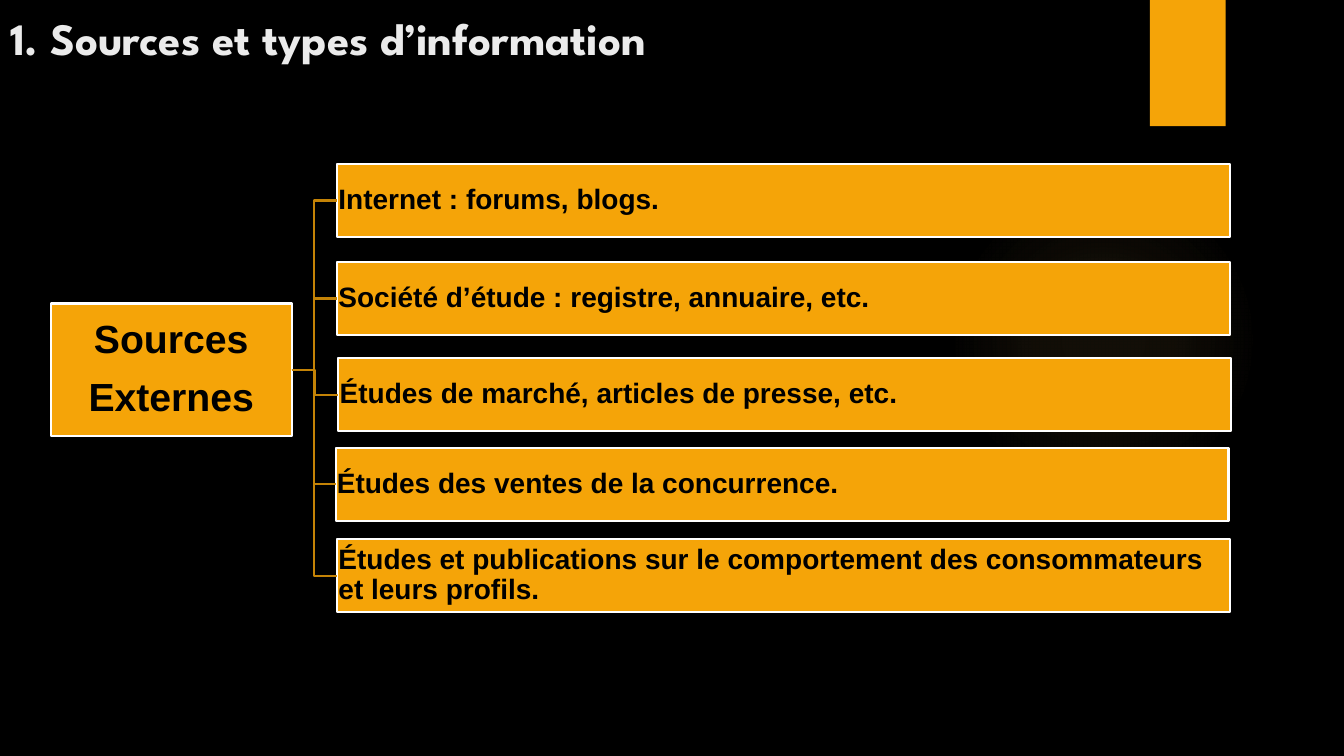
from lxml.etree import SubElement
from pptx import Presentation
from pptx.dml.color import RGBColor
from pptx.enum.shapes import MSO_CONNECTOR, MSO_SHAPE
from pptx.enum.text import MSO_ANCHOR, MSO_AUTO_SIZE, PP_ALIGN
from pptx.oxml import parse_xml
from pptx.oxml.ns import nsdecls, qn
from pptx.util import Cm, Pt

COLORS = {
    "background": "000000",
    "accent": "F5A408",
    "glow": "FAC96A",
    "title": "EBEBEB",
    "text": "000000",
    "border": "FFFFFF",
    "branch": "C48306",
}
RIGHT_SITE, LEFT_SITE = 3, 1
BAR_WIDTH, BAR_HEIGHT = 22.5, 1.85

# Left and top of each bar within the diagram, with its text
SOURCES = [
    (7.22, 0, "Internet : forums, blogs."),
    (7.22, 2.47, "Société d’étude : registre, annuaire, etc."),
    (7.25, 4.89, "Études de marché, articles de presse, etc."),
    (7.18, 7.15, "Études des ventes de la concurrence."),
    (7.22, 9.45, "Études et publications sur le comportement des "
                 "consommateurs et leurs profils."),
]


def color(name):
    return RGBColor.from_string(COLORS[name])


def format_paragraph(paragraph, font_name, size, color_name, alignment):
    paragraph.alignment = alignment
    for run in paragraph.runs:
        run.font.name = font_name
        run.font.size = Pt(size)
        run.font.bold = True
        run.font.color.rgb = color(color_name)


def add_filled_shape(slide, kind, left, top, width, height):
    shape = slide.shapes.add_shape(kind, Cm(left), Cm(top), Cm(width), Cm(height))
    shape.shadow.inherit = False
    shape.fill.solid()
    shape.fill.fore_color.rgb = color("accent")
    shape.line.fill.background()
    return shape


def add_glow(slide, left, top, size):
    glow = add_filled_shape(slide, MSO_SHAPE.OVAL, left, top, size, size)
    stops = "".join(
        f'<a:gs pos="{position * 1000}"><a:srgbClr val="{COLORS["glow"]}">'
        f'<a:alpha val="{alpha * 1000}"/></a:srgbClr></a:gs>'
        for position, alpha in [(0, 7), (36, 6), (69, 0), (100, 0)]
    )
    gradient = parse_xml(
        f'<a:gradFill {nsdecls("a")} rotWithShape="1"><a:gsLst>{stops}</a:gsLst>'
        '<a:path path="circle">'
        '<a:fillToRect l="50000" t="50000" r="50000" b="50000"/>'
        '</a:path></a:gradFill>'
    )
    properties = glow.element.spPr
    properties.replace(properties.find(qn("a:solidFill")), gradient)


def add_decoration(slide):
    add_glow(slide, 23.9, 4.65, 7.82)
    add_filled_shape(slide, MSO_SHAPE.RECTANGLE, 28.98, 0, 1.91, 3.18)


def add_title(slide, left, top, width, height):
    title = slide.shapes.title
    title.left, title.top = Cm(left), Cm(top)
    title.width, title.height = Cm(width), Cm(height)
    text_frame = title.text_frame
    text_frame.text = "1. Sources et types d’information"
    text_frame.auto_size = MSO_AUTO_SIZE.NONE
    text_frame.vertical_anchor = MSO_ANCHOR.BOTTOM
    format_paragraph(text_frame.paragraphs[0], "League Spartan", 32, "title",
                     PP_ALIGN.LEFT)


def add_box(slide, left, top, width, height, text, size, alignment, inset):
    box = add_filled_shape(slide, MSO_SHAPE.RECTANGLE, left, top, width, height)
    box.line.color.rgb = color("border")
    box.line.width = Pt(1.5)
    text_frame = box.text_frame
    text_frame.text = text
    text_frame.word_wrap = True
    text_frame.vertical_anchor = MSO_ANCHOR.MIDDLE
    text_frame.margin_left = text_frame.margin_right = Cm(inset)
    text_frame.margin_top = text_frame.margin_bottom = Cm(inset)
    for paragraph in text_frame.paragraphs:
        paragraph.line_spacing = 0.9
        format_paragraph(paragraph, "Arial", size, "text", alignment)
    # Space between paragraphs only
    for paragraph in text_frame.paragraphs[:-1]:
        paragraph.space_after = Pt(11)
    return box


def add_branch(slide, root, bar):
    branch = slide.shapes.add_connector(MSO_CONNECTOR.ELBOW, 0, 0, 0, 0)
    branch.begin_connect(root, RIGHT_SITE)
    branch.end_connect(bar, LEFT_SITE)
    branch.line.color.rgb = color("branch")
    branch.line.width = Pt(1.5)
    SubElement(branch.element.spPr, qn("a:effectLst"))


def add_source_tree(slide, left, top):
    root = add_box(slide, left, top + 3.52, 6.07, 3.33, "Sources\nExternes",
                   28, PP_ALIGN.CENTER, 0.05)
    for bar_left, bar_top, text in SOURCES:
        bar = add_box(slide, left + bar_left, top + bar_top, BAR_WIDTH,
                      BAR_HEIGHT, text, 20, PP_ALIGN.LEFT, 0.03)
        add_branch(slide, root, bar)


def main():
    presentation = Presentation()
    presentation.slide_width = Cm(33.87)
    presentation.slide_height = Cm(19.05)
    slide = presentation.slides.add_slide(
        presentation.slide_layouts.get_by_name("Title Only"))
    slide.background.fill.solid()
    slide.background.fill.fore_color.rgb = color("background")

    add_decoration(slide)
    add_title(slide, 0, 0, 24.5, 1.75)
    add_source_tree(slide, 1.28, 4.13)
    presentation.save("out.pptx")


if __name__ == "__main__":
    main()
